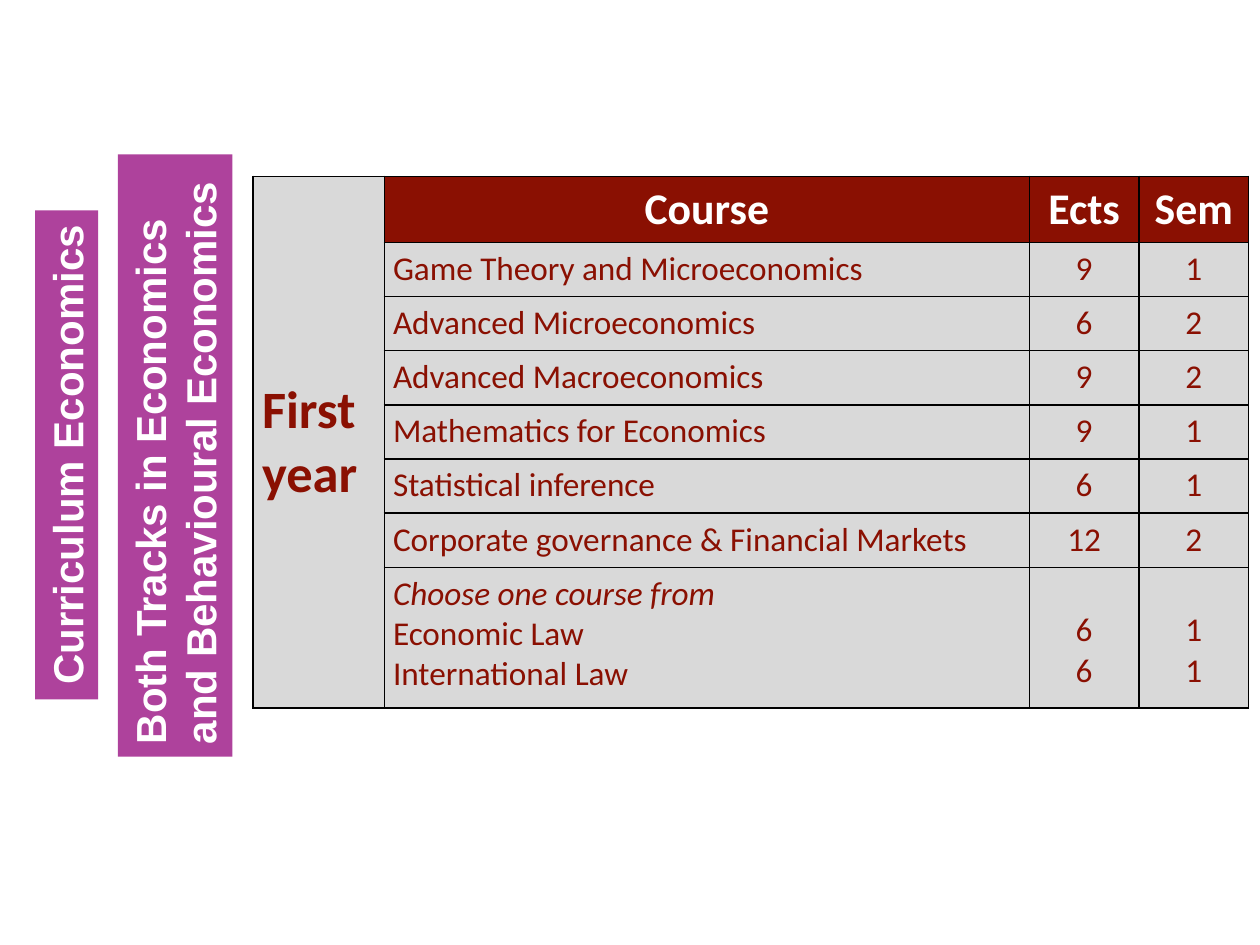
from dataclasses import dataclass, field

import pptx
import pptx.dml.color
import pptx.enum.shapes
import pptx.enum.text
import pptx.oxml
import pptx.oxml.ns
import pptx.presentation
import pptx.slide
import pptx.table
import pptx.text.text
import pptx.util

Inches = pptx.util.Inches
Pt = pptx.util.Pt
Align = pptx.enum.text.PP_ALIGN
Anchor = pptx.enum.text.MSO_ANCHOR

DARK_RED = pptx.dml.color.RGBColor(0x8A, 0x10, 0x02)
PURPLE = pptx.dml.color.RGBColor(0xAE, 0x42, 0x9C)
GREY = pptx.dml.color.RGBColor(0xD9, 0xD9, 0xD9)
WHITE = pptx.dml.color.RGBColor(0xFF, 0xFF, 0xFF)
BLACK = pptx.dml.color.RGBColor(0, 0, 0)

YEAR_FONT = {"name": "Calibri", "size": Pt(30), "bold": True, "italic": False}
HEADER_FONT = YEAR_FONT | {"size": Pt(25)}
COURSE_FONT = YEAR_FONT | {"size": Pt(19), "bold": False}
CHOICE_FONT = COURSE_FONT | {"italic": True}
BANNER_FONT = YEAR_FONT | {"name": "Arial", "size": Pt(24)}


@dataclass
class Line:
    text: str
    font: dict = field(default_factory=lambda: COURSE_FONT)
    align: Align = Align.LEFT
    color: pptx.dml.color.RGBColor = DARK_RED


@dataclass
class Course:
    names: list[Line]
    ects: list[str]
    semesters: list[str]
    height: float = 0.43
    anchor: Anchor = Anchor.TOP
    number_top: float = 0.05


@dataclass
class Banner:
    line: Line
    left: float
    top: float
    width: float
    height: float
    wrap: bool


COURSES = [
    Course([Line("Game Theory and Microeconomics")], ["9"], ["1"]),
    Course([Line("Advanced Microeconomics")], ["6"], ["2"]),
    Course([Line("Advanced Macroeconomics", align=Align.JUSTIFY)], ["9"], ["2"]),
    Course([Line("Mathematics for Economics", align=Align.JUSTIFY)], ["9"], ["1"]),
    Course([Line("Statistical inference", align=Align.JUSTIFY)], ["6"], ["1"]),
    Course([Line("Corporate governance & Financial Markets")], ["12"], ["2"],
           anchor=Anchor.MIDDLE),
    # The numbers of the elective courses start one line lower
    Course([Line("Choose one course from", CHOICE_FONT),
            Line("Economic Law", align=Align.JUSTIFY),
            Line("International Law")],
           ["6", "6"], ["1", "1"], height=1.06, number_top=0.34),
]
BANNERS = [
    Banner(Line("Both Tracks in Economics and Behavioural Economics",
                BANNER_FONT, color=WHITE), -1, 3.16, 4.78, 0.91, True),
    Banner(Line("Curriculum Economics", BANNER_FONT, Align.CENTER, WHITE),
           -1.41, 3.36, 3.88, 0.5, False),
]
COLUMN_WIDTHS = [1.04, 5.12, 0.87, 0.87]
HEADER_HEIGHT = 0.52


def write_lines(frame: pptx.text.text.TextFrame, lines: list[Line]) -> None:
    for index, line in enumerate(lines):
        para = frame.paragraphs[0] if index == 0 else frame.add_paragraph()
        para.alignment = line.align
        span = para.add_run()
        span.text = line.text
        for name, value in line.font.items():
            setattr(span.font, name, value)
        span.font.color.rgb = line.color


def add_borders(cell: pptx.table._Cell) -> None:
    properties = cell._tc.get_or_add_tcPr()
    for side in ("lnL", "lnR", "lnT", "lnB"):
        properties.append(pptx.oxml.parse_xml(
            f'<a:{side} {pptx.oxml.ns.nsdecls("a")} w="{Pt(0.96)}">'
            f'<a:solidFill><a:srgbClr val="{BLACK}"/></a:solidFill></a:{side}>'))


def fill_cell(cell: pptx.table._Cell, lines: list[Line],
              fill: pptx.dml.color.RGBColor = GREY,
              anchor: Anchor = Anchor.TOP, top: float = 0.05) -> None:
    layout = {"margin_left": Inches(0.07), "margin_right": Inches(0.07),
              "margin_top": Inches(top), "margin_bottom": Inches(0.05),
              "vertical_anchor": anchor}
    for name, value in layout.items():
        setattr(cell, name, value)
    cell.fill.solid()
    cell.fill.fore_color.rgb = fill
    write_lines(cell.text_frame, lines)


def add_course_table(page: pptx.slide.Slide) -> None:
    heights = [HEADER_HEIGHT] + [course.height for course in COURSES]
    table = page.shapes.add_table(
        len(heights), len(COLUMN_WIDTHS), Inches(2.01), Inches(1.4),
        Inches(sum(COLUMN_WIDTHS)), Inches(sum(heights))).table
    table.first_row = table.horz_banding = False
    for column, width in zip(table.columns, COLUMN_WIDTHS):
        column.width = Inches(width)
    for row, height in zip(table.rows, heights):
        row.height = Inches(height)
    for cell in table.iter_cells():
        add_borders(cell)

    # Year label down the left side
    table.cell(0, 0).merge(table.cell(len(COURSES), 0))
    fill_cell(table.cell(0, 0), [Line("First year", YEAR_FONT)], anchor=Anchor.MIDDLE)

    # Header row
    for column, title in enumerate(("Course", "Ects", "Sem"), start=1):
        fill_cell(table.cell(0, column),
                  [Line(title, HEADER_FONT, Align.CENTER, WHITE)], DARK_RED)

    # Course rows
    for row, course in enumerate(COURSES, start=1):
        fill_cell(table.cell(row, 1), course.names, anchor=course.anchor)
        for column, numbers in enumerate((course.ects, course.semesters), start=2):
            fill_cell(table.cell(row, column),
                      [Line(number, align=Align.CENTER) for number in numbers],
                      anchor=course.anchor, top=course.number_top)


def add_banner(page: pptx.slide.Slide, banner: Banner) -> None:
    box = page.shapes.add_shape(
        pptx.enum.shapes.MSO_SHAPE.RECTANGLE, Inches(banner.left),
        Inches(banner.top), Inches(banner.width), Inches(banner.height))
    box.rotation = 270
    box.shadow.inherit = False
    box.fill.solid()
    box.fill.fore_color.rgb = PURPLE
    box.line.fill.background()
    layout = {"word_wrap": banner.wrap, "vertical_anchor": Anchor.TOP,
              "auto_size": pptx.enum.text.MSO_AUTO_SIZE.SHAPE_TO_FIT_TEXT}
    for name, value in layout.items():
        setattr(box.text_frame, name, value)
    write_lines(box.text_frame, [banner.line])


def main() -> None:
    deck = pptx.Presentation()
    deck.slide_width, deck.slide_height = Inches(10), Inches(7.5)
    page = deck.slides.add_slide(deck.slide_layouts[6])
    add_course_table(page)
    for banner in BANNERS:
        add_banner(page, banner)
    deck.save("out.pptx")


if __name__ == "__main__":
    main()
